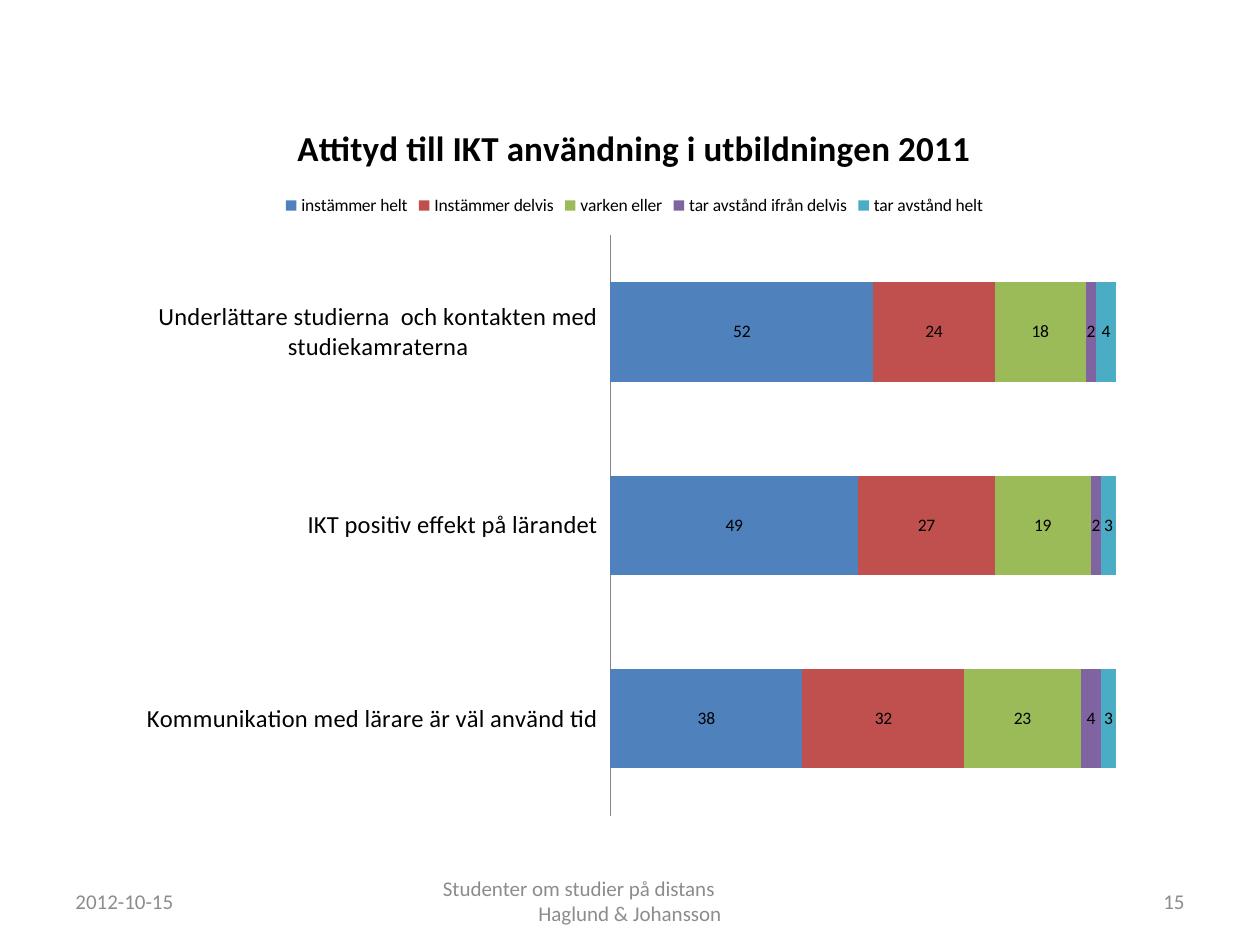
from lxml import etree
from pptx import Presentation
from pptx.chart.data import CategoryChartData
from pptx.dml.color import RGBColor
from pptx.enum.chart import XL_CHART_TYPE, XL_LEGEND_POSITION, XL_TICK_LABEL_POSITION, XL_TICK_MARK
from pptx.enum.text import MSO_ANCHOR, PP_ALIGN
from pptx.oxml.ns import qn
from pptx.util import Pt

BARS = XL_CHART_TYPE.BAR_STACKED_100
TOP = XL_LEGEND_POSITION.TOP
LOW = XL_TICK_LABEL_POSITION.LOW
NONE = XL_TICK_MARK.NONE
MIDDLE = MSO_ANCHOR.MIDDLE
LEFT, CENTER, RIGHT = PP_ALIGN.LEFT, PP_ALIGN.CENTER, PP_ALIGN.RIGHT

THEME = {
    "font": "Calibri",
    "ink": RGBColor.from_string("000000"),
    "axis": RGBColor.from_string("868686"),
    "footer": RGBColor.from_string("8C8C8C"),
    "title_size": Pt(20), "axis_size": Pt(14), "foot_size": Pt(12), "base_size": Pt(10),
}

SERIES = [
    ("instämmer helt", (38, 49, 52), "4F81BD"),
    ("Instämmer delvis", (32, 27, 24), "C0504D"),
    ("varken eller", (23, 19, 18), "9BBB59"),
    ("tar avstånd ifrån delvis", (4, 2, 2), "8064A2"),
    ("tar avstånd helt", (3, 3, 4), "4BACC6"),
]


def style(font, size, color, bold=False):
    font.name, font.size, font.bold = THEME["font"], size, bold
    font.color.rgb = color


deck = Presentation()
deck.slide_width, deck.slide_height = Pt(720), Pt(540)
slide = deck.slides.add_slide(deck.slide_layouts[6])

# Chart
data = CategoryChartData()
data.categories = [
    "Kommunikation med lärare är väl använd tid",
    "IKT positiv effekt på lärandet",
    "Underlättare studierna  och kontakten med studiekamraterna",
]
for name, values, color in SERIES:
    data.add_series(name, values)
chart = slide.shapes.add_chart(BARS, Pt(76.3), Pt(54.7), Pt(572.4), Pt(419.8), data).chart
style(chart.font, THEME["base_size"], THEME["ink"])

# Title and legend
chart.has_title = True
title = chart.chart_title.text_frame
title.text = "Attityd till IKT användning i utbildningen 2011"
style(title.paragraphs[0].font, THEME["title_size"], THEME["ink"], True)
chart.has_legend = True
chart.legend.position = TOP
chart.legend.include_in_layout = False

# Axes
rows = chart.category_axis
rows.major_tick_mark = rows.minor_tick_mark = NONE
rows.tick_label_position = LOW
rows.format.line.color.rgb = THEME["axis"]
style(rows.tick_labels.font, THEME["axis_size"], THEME["ink"])
chart.value_axis.visible = False
chart.value_axis.has_major_gridlines = False

# Bars and their values
plot = chart.plots[0]
plot.gap_width, plot.overlap = 95, 100
for bar, (name, values, color) in zip(plot.series, SERIES):
    bar.format.fill.solid()
    bar.format.fill.fore_color.rgb = RGBColor.from_string(color)
    bar.data_labels.show_value = True

# Inner plot area, as shares of the chart
area = chart._chartSpace.chart.plotArea
for old in area.findall(qn("c:layout")):
    area.remove(old)
layout = etree.Element(qn("c:layout"))
area.insert(0, layout)
manual = etree.SubElement(layout, qn("c:manualLayout"))
for tag, value in (("layoutTarget", "inner"), ("xMode", "edge"), ("yMode", "edge"),
                   ("x", "0.476"), ("y", "0.19"), ("w", "0.505"), ("h", "0.79")):
    etree.SubElement(manual, qn("c:" + tag)).set("val", value)

# Footer: date, source, page number
for left, width, lines in (
    (36, 168, [("2012-10-15", LEFT)]),
    (246, 228, [("Studenter om studier på distans", LEFT), ("Haglund & Johansson", CENTER)]),
    (516, 168, [("15", RIGHT)]),
):
    frame = slide.shapes.add_textbox(Pt(left), Pt(500.5), Pt(width), Pt(28.75)).text_frame
    frame.word_wrap = True
    frame.vertical_anchor = MIDDLE
    frame.text = "\n".join(text for text, align in lines)
    for para, (text, align) in zip(frame.paragraphs, lines):
        para.alignment = align
        style(para.font, THEME["foot_size"], THEME["footer"])

deck.save("out.pptx")
